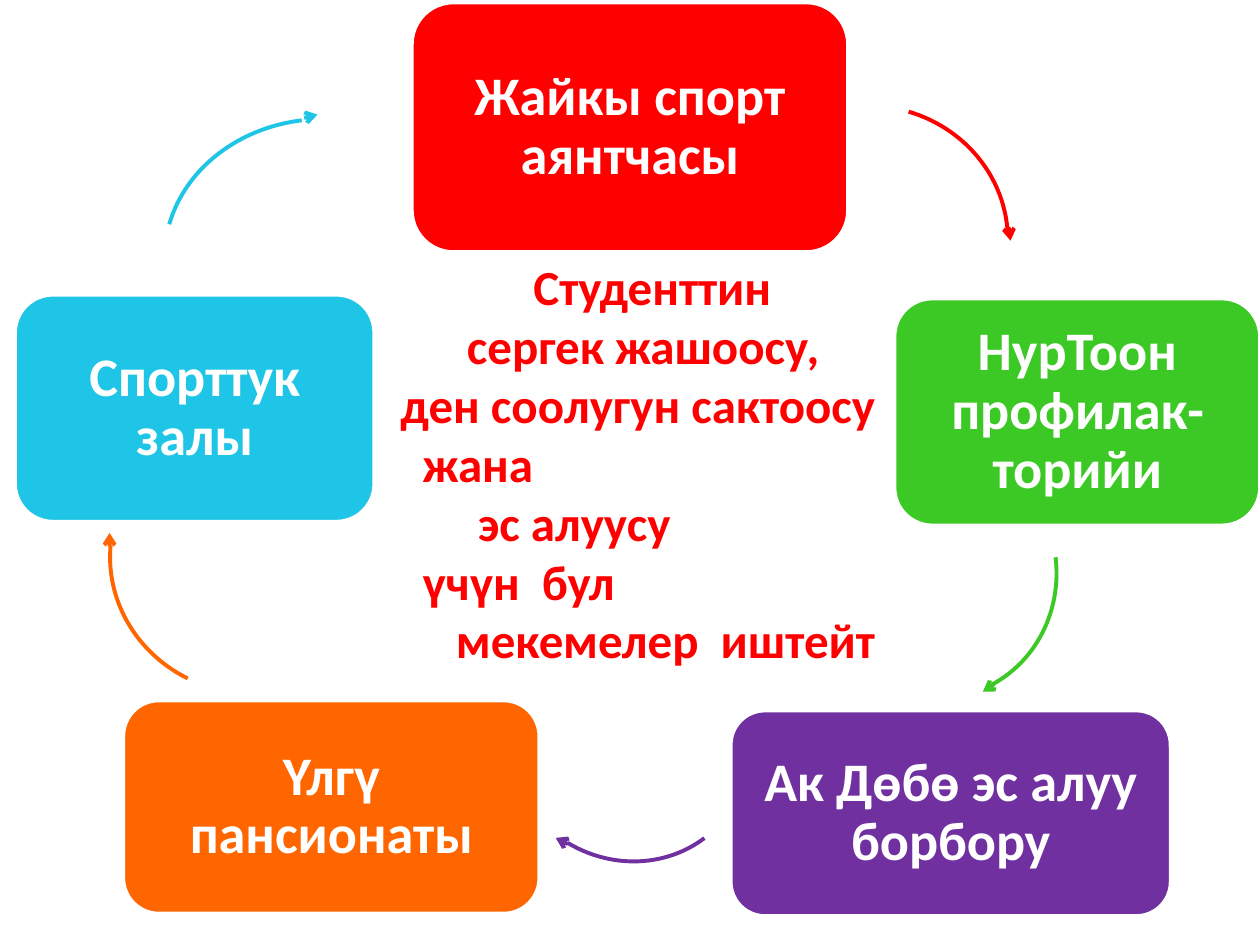
from lxml import etree
from pptx import Presentation
from pptx import util as u
from pptx.dml.color import RGBColor
from pptx.enum import shapes, text
from pptx.oxml.ns import qn

RED = RGBColor(0xFF, 0x00, 0x00)
GREEN = RGBColor(0x3C, 0xC9, 0x25)
PURPLE = RGBColor(0x70, 0x30, 0xA0)
ORANGE = RGBColor(0xFF, 0x66, 0x00)
CYAN = RGBColor(0x1E, 0xC5, 0xE6)
WHITE = RGBColor(0xFF, 0xFF, 0xFF)

WIDTH, HEIGHT = u.Inches(10), u.Inches(7.5)
COLUMNS, ROWS = 100, 75
SWEEP_START, SWEEP_END = 282.55, 351.24
ADJUSTMENT_PER_DEGREE = 0.6
SPACE_WIDTH = u.Pt(6.33)

STATIONS = [
    ("Жайкы спорт аянтчасы", RED, (32.7, 0.2, 34.6, 19.8)),
    ("НурТоон профилак-торийи", GREEN, (71, 23.7, 29, 18)),
    ("Ак Дөбө эс алуу борбору", PURPLE, (58, 56.4, 34.9, 16.3)),
    ("Үлгү пансионаты", ORANGE, (9.8, 55.6, 33, 16.9)),
    ("Спорттук залы", CYAN, (1.2, 23.4, 28.5, 18)),
]
SWEEPS = [
    (RED, (57.9, 8.4, 22.1, 21.1), 4.9, (80.1, 18.4, 80.2, 19.1)),
    (GREEN, (63.7, 35.4, 20.6, 19.6), 71.8, (78.6, 54.5, 78, 54.9)),
    (PURPLE, (40.4, 48.9, 18.7, 19.8), 128.9, (44.7, 66.8, 44.1, 66.5)),
    (ORANGE, (8.7, 33.9, 22.1, 21.1), 194.8, (8.7, 43, 8.7, 42.3)),
    (CYAN, (14.6, 7.9, 22.1, 25.2), 269.9, (24.4, 9.3, 25.2, 9.1)),
]
MESSAGE_BOX = (30.8, 19.9, 39.9, 34)
MESSAGE = [
    ("Студенттин", 12),
    ("сергек жашоосу,", 6),
    ("ден соолугун сактоосу", 0),
    ("жана", 2),
    ("эс алуусу", 7),
    ("үчүн  бул", 2),
    ("мекемелер  иштейт", 5),
]


def on_grid(box):
    """Turn column and row pairs into slide lengths."""
    units = (WIDTH / COLUMNS, HEIGHT / ROWS) * 2
    return [u.Emu(round(share * unit)) for share, unit in zip(box, units)]


def style_font(paragraph, size, color):
    """Give a paragraph the slide's bold lettering."""
    font = paragraph.font
    font.name, font.size, font.bold = "Calibri", u.Pt(size), True
    font.color.rgb = color


def add_station(slide, box, label, color):
    """Place one labelled facility of the cycle in its box."""
    station = slide.shapes.add_shape(
        shapes.MSO_SHAPE.ROUNDED_RECTANGLE, *on_grid(box))
    station.shadow.inherit = False
    station.fill.solid()
    station.fill.fore_color.rgb = color
    station.line.color.rgb = WHITE
    station.line.width = u.Pt(2)
    frame = station.text_frame
    frame.word_wrap = True
    frame.vertical_anchor = text.MSO_ANCHOR.MIDDLE
    frame.margin_left = frame.margin_right = u.Inches(0.13)
    frame.margin_top = frame.margin_bottom = u.Inches(0.13)
    paragraph = frame.paragraphs[0]
    paragraph.text = label
    paragraph.alignment = text.PP_ALIGN.CENTER
    paragraph.line_spacing = 0.9
    style_font(paragraph, 31, WHITE)


def add_sweep(slide, box, color, turn, tip):
    """Place a curved arrow: an arc in its box and a short headed tip."""
    arc = slide.shapes.add_shape(shapes.MSO_SHAPE.ARC, *on_grid(box))
    arc.shadow.inherit = False
    arc.fill.background()
    arc.rotation = turn
    for index, angle in enumerate((SWEEP_START, SWEEP_END)):
        arc.adjustments[index] = angle * ADJUSTMENT_PER_DEGREE
    head = slide.shapes.add_connector(
        shapes.MSO_CONNECTOR.STRAIGHT, *on_grid(tip))
    for stroke in (arc, head):
        stroke.line.color.rgb = color
        stroke.line.width = u.Pt(2.25)
    etree.SubElement(head.line._get_or_add_ln(), qn("a:tailEnd"), type="arrow")
    etree.SubElement(head._element.spPr, qn("a:effectLst"))


def add_message(slide, box, lines):
    """Place the central message with each line at its own indent."""
    frame = slide.shapes.add_textbox(*on_grid(box)).text_frame
    frame.word_wrap = True
    for index, (line, spaces) in enumerate(lines):
        paragraph = frame.add_paragraph() if index else frame.paragraphs[0]
        paragraph.text = line
        style_font(paragraph, 28, RED)
        paragraph._p.get_or_add_pPr().set("marL", str(SPACE_WIDTH * spaces))


def main():
    """Build the cycle slide and save it."""
    deck = Presentation()
    deck.slide_width, deck.slide_height = WIDTH, HEIGHT
    slide = deck.slides.add_slide(deck.slide_layouts[6])
    for label, color, box in STATIONS:
        add_station(slide, box, label, color)
    add_message(slide, MESSAGE_BOX, MESSAGE)
    for color, box, turn, tip in SWEEPS:
        add_sweep(slide, box, color, turn, tip)
    deck.save("out.pptx")


if __name__ == "__main__":
    main()
